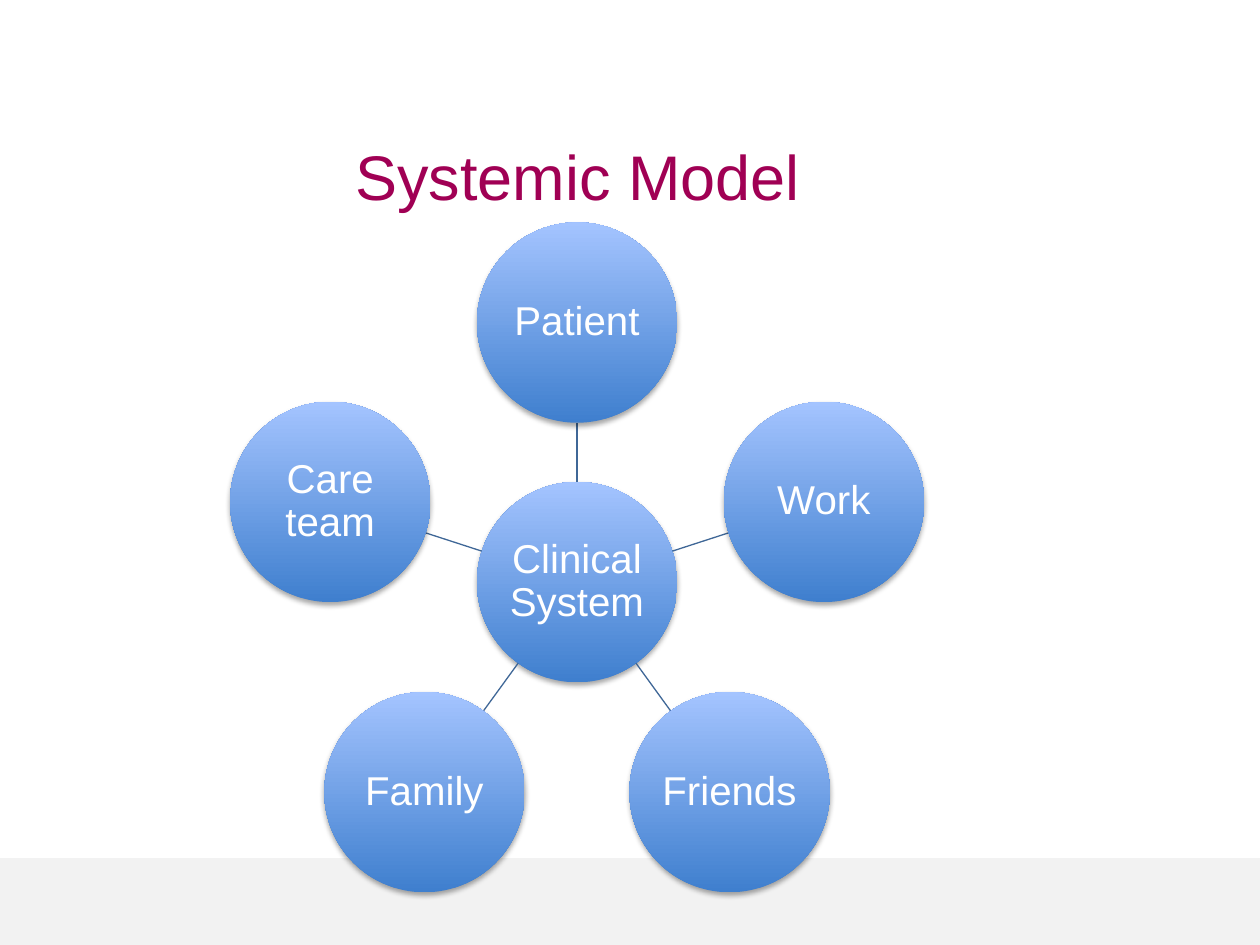
from math import cos, radians, sin

from lxml import etree
from pptx import Presentation
from pptx.dml.color import RGBColor
from pptx.enum.shapes import MSO_CONNECTOR as CONNECTOR, MSO_SHAPE as SHAPE
from pptx.enum.text import MSO_ANCHOR as ANCHOR, PP_ALIGN as ALIGN
from pptx.oxml import parse_xml
from pptx.oxml.ns import nsdecls, qn
from pptx.util import Inches, Pt

COLORS = {
    "band": "F2F2F2",
    "title": "A00054",
    "bottom": "3F7FCE",
    "top": "A4C4FF",
    "label": "FFFFFF",
    "spoke": "3F6797",
    "shadow": "000000",
}
FONT = "Arial"
CENTER_X, CENTER_Y = 4.58, 4.62
ORBIT = 2.06
DIAMETER = 1.59
HUB = "Clinical System"
SATELLITES = ["Patient", "Work", "Friends", "Family", "Care team"]


def color(name):
    """Return the named colour."""
    return RGBColor.from_string(COLORS[name])


def orbit_point(angle, distance):
    """Return the point at an angle and distance from the hub's centre."""
    turn = radians(angle)
    return CENTER_X + distance * cos(turn), CENTER_Y + distance * sin(turn)


def set_text(box, text, size, tint, anchor, margin):
    """Write one centred paragraph into a shape."""
    frame = box.text_frame
    frame.word_wrap = True
    frame.vertical_anchor = anchor
    frame.margin_left = frame.margin_right = Inches(margin)
    frame.margin_top = frame.margin_bottom = Inches(margin)
    para = frame.paragraphs[0]
    para.text = text
    para.alignment = ALIGN.CENTER
    para.font.name = FONT
    para.font.size = Pt(size)
    para.font.color.rgb = color(tint)
    return para


def add_band(page):
    """Draw the grey band along the foot of the page."""
    band = page.shapes.add_shape(
        SHAPE.RECTANGLE, 0, Inches(6.81), Inches(10), Inches(0.69))
    band.shadow.inherit = False
    band.fill.solid()
    band.fill.fore_color.rgb = color("band")
    band.line.fill.background()


def add_title(page, text):
    """Add the page title."""
    box = page.shapes.add_textbox(
        Inches(0.5), Inches(1), Inches(8.17), Inches(0.7))
    set_text(box, text, 36, "title", ANCHOR.BOTTOM, 0.01)


def add_shadow(shape):
    """Give a shape a soft shadow below it."""
    shape.shadow.inherit = False
    effects = shape._element.spPr.find(qn("a:effectLst"))
    effects.append(parse_xml(
        f'<a:outerShdw {nsdecls("a")} blurRad="{Pt(3.1)}" dist="{Pt(1.8)}" '
        f'dir="5400000" rotWithShape="0"><a:srgbClr val="{COLORS["shadow"]}">'
        '<a:alpha val="35000"/></a:srgbClr></a:outerShdw>'))


def add_circle(page, text, x, y):
    """Draw a labelled gradient circle around a centre point."""
    circle = page.shapes.add_shape(
        SHAPE.OVAL, Inches(x - DIAMETER / 2), Inches(y - DIAMETER / 2),
        Inches(DIAMETER), Inches(DIAMETER))
    circle.fill.gradient()
    circle.fill.gradient_angle = 90
    for stop, position, name in zip(
            circle.fill.gradient_stops, (0, 1), ("bottom", "top")):
        stop.position = position
        stop.color.rgb = color(name)
    circle.line.fill.background()
    add_shadow(circle)
    para = set_text(circle, text, 23, "label", ANCHOR.MIDDLE, 0.02)
    para.line_spacing = 0.9


def add_spoke(page, angle):
    """Join the hub's edge to the edge of the satellite at an angle."""
    start = orbit_point(angle, DIAMETER / 2)
    end = orbit_point(angle, ORBIT - DIAMETER / 2)
    spoke = page.shapes.add_connector(
        CONNECTOR.STRAIGHT, *(Inches(value) for value in start + end))
    spoke.line.color.rgb = color("spoke")
    spoke.line.width = Pt(0.75)
    etree.SubElement(spoke._element.spPr, qn("a:effectLst"))


def main():
    """Build the slide and save it."""
    deck = Presentation()
    deck.slide_width, deck.slide_height = Inches(10), Inches(7.5)
    page = deck.slides.add_slide(deck.slide_layouts[6])
    add_band(page)
    add_title(page, "Systemic Model")
    add_circle(page, HUB, CENTER_X, CENTER_Y)
    for index, label in enumerate(SATELLITES):
        angle = -90 + index * 360 / len(SATELLITES)
        add_spoke(page, angle)
        add_circle(page, label, *orbit_point(angle, ORBIT))
    deck.save("out.pptx")


if __name__ == "__main__":
    main()
